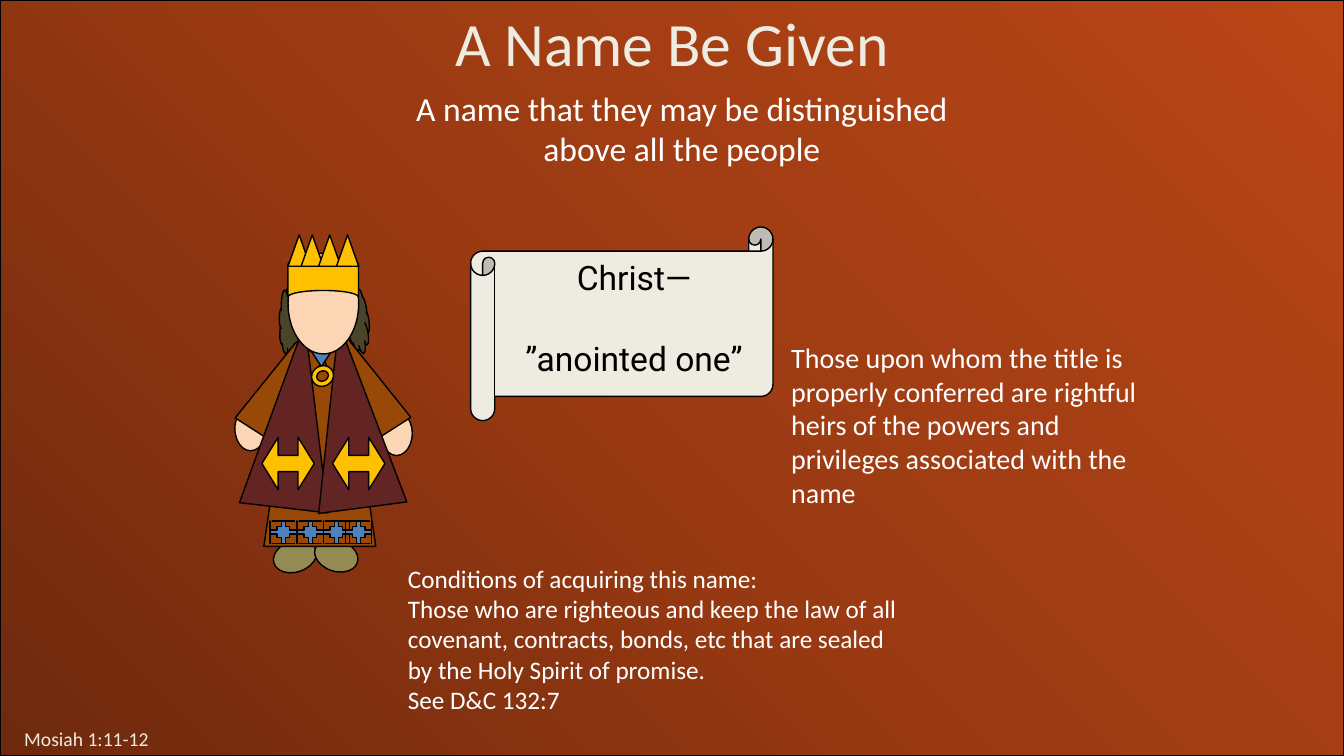
"""Build the slide about the name given to the people in Mosiah."""
from copy import deepcopy

from pptx import Presentation
from pptx.dml.color import RGBColor
from pptx.enum import shapes, text
from pptx.util import Cm, Pt

KIND = shapes.MSO_SHAPE
WIDTH, HEIGHT = 33.87, 19.05
GOLD, SKIN, BROWN, MAROON = "FFC000", "FCD5B5", "984807", "632523"
OLIVE, DARK_OLIVE, BLUE = "948A54", "4A452A", "4F81BD"
IVORY, WHITE, BLACK = "EEECE1", "FFFFFF", "000000"


def colour(value):
    """Turn a hex string into a colour."""
    return RGBColor.from_string(value)


def add_figure(parent, kind, place, fill, turn=0, adjust=()):
    """Add an outlined preset shape, placed in centimetres."""
    shape = parent.shapes.add_shape(kind, *map(Cm, place))
    shape.shadow.inherit = False
    shape.fill.solid()
    shape.fill.fore_color.rgb = colour(fill)
    shape.line.color.rgb = colour(BLACK)
    shape.line.width = Pt(1)
    shape.rotation = turn
    for index, value in enumerate(adjust):
        shape.adjustments[index] = value
    return shape


def add_background(page):
    """Cover the page with a diagonal three-stop gradient."""
    panel = add_figure(page, KIND.RECTANGLE, (0, 0, WIDTH, HEIGHT), BROWN)
    panel.fill.gradient()
    panel.fill.gradient_angle = 45
    first = panel._element.spPr.find(".//{*}gs")
    first.addnext(deepcopy(first))
    stops = ((0, "6E290D"), (0.5, "9C3B13"), (1, "BA4616"))
    for stop, (position, value) in zip(panel.fill.gradient_stops, stops):
        stop.position = position
        stop.color.rgb = colour(value)


def add_text(page, place, lines, size, value, font="Calibri", centred=False, gap=0):
    """Add a wrapping text box with one paragraph per line."""
    box = page.shapes.add_textbox(*map(Cm, place))
    frame = box.text_frame
    frame.word_wrap = True
    frame.auto_size = text.MSO_AUTO_SIZE.SHAPE_TO_FIT_TEXT
    frame.text = "\n".join(lines)
    for index, para in enumerate(frame.paragraphs):
        para.alignment = text.PP_ALIGN.CENTER if centred else text.PP_ALIGN.LEFT
        para.space_before = Pt(gap if index else 0)
        for span in para.runs:
            span.font.name = font
            span.font.size = Pt(size)
            span.font.color.rgb = colour(value)


def add_body(king):
    """Draw feet, robe, hands, hair, sleeves and coat."""
    add_figure(king, KIND.OVAL, (7.04, 13.46, 0.79, 1.12), OLIVE, 71.6)
    add_figure(king, KIND.OVAL, (8.08, 13.44, 0.79, 1.12), OLIVE, 288.4)
    add_figure(king, KIND.TRAPEZOID, (6.65, 8.92, 2.82, 4.85), BROWN)
    for left, top in ((9.6, 10.36), (5.92, 10.24)):
        add_figure(king, KIND.OVAL, (left, top, 0.79, 1.12), SKIN)
    add_figure(king, KIND.CLOUD, (8.74, 7.29, 0.56, 1.63), DARK_OLIVE, 350.5)
    add_figure(king, KIND.CLOUD, (7.04, 7.14, 0.56, 1.88), DARK_OLIVE)
    sleeve = KIND.FLOWCHART_MANUAL_OPERATION
    add_figure(king, sleeve, (6.48, 8.64, 1.32, 2.44), BROWN, 212.7)
    add_figure(king, sleeve, (8.46, 8.56, 1.32, 2.51), BROWN, 147.3)
    for left, turn in ((6.27, 6.6), (7.75, 352.6)):
        add_figure(king, KIND.TRAPEZOID, (left, 8.59, 2.24, 4.22), MAROON, turn, [0.45])
    add_figure(king, KIND.ISOSCELES_TRIANGLE, (7.82, 8.81, 0.56, 0.43), BLUE, 180)


def add_regalia(king):
    """Draw the hem, face, crown, coat arrows and brooch."""
    for left in (6.81, 7.49, 8.15, 8.71):
        add_figure(king, KIND.QUAD_ARROW_CALLOUT, (left, 13.13, 0.66, 0.56), BLUE,
                   adjust=(0.185, 0.5, 0.185, 0.481))
    add_figure(king, KIND.OVAL, (7.26, 6.38, 1.78, 2.54), SKIN)
    add_figure(king, KIND.FLOWCHART_STORED_DATA, (7.65, 6.1, 0.99, 1.78), GOLD, 90)
    for left in (7.26, 7.59, 8.03, 8.48):
        add_figure(king, KIND.ISOSCELES_TRIANGLE, (left, 5.92, 0.56, 0.79), GOLD)
    for left in (6.6, 8.38):
        add_figure(king, KIND.LEFT_RIGHT_ARROW, (left, 11.02, 1.32, 1.32), GOLD, 180,
                   (0.31, 0.31))
    add_figure(king, KIND.DONUT, (7.85, 9.22, 0.56, 0.51), GOLD, 332.7)


def main():
    """Assemble the slide and save it."""
    deck = Presentation()
    deck.slide_width, deck.slide_height = Cm(WIDTH), Cm(HEIGHT)
    page = deck.slides.add_slide(deck.slide_layouts[6])
    add_background(page)
    add_text(page, (4.24, 0, 25.4, 2.13), ["A Name Be Given"], 44, IVORY, centred=True)
    add_text(page, (0.36, 18.19, 6.78, 0.86), ["Mosiah 1:11-12"], 14, IVORY)
    add_text(page, (9.35, 2.08, 15.67, 2.31),
             ["A name that they may be distinguished above all the people"],
             24, WHITE, centred=True)
    add_text(page, (19.69, 8.46, 9.53, 4.52),
             ["Those upon whom the title is properly conferred are rightful heirs "
              "of the powers and privileges associated with the name"], 20, WHITE)
    king = page.shapes.add_group_shape()
    add_body(king)
    add_regalia(king)
    add_figure(page, KIND.HORIZONTAL_SCROLL, (11.86, 5.72, 7.62, 4.88), IVORY)
    add_text(page, (12.27, 6.35, 7.42, 3.33), ["Christ—", "”anointed one”"],
             24, BLACK, "Roboto", centred=True, gap=29)
    add_text(page, (10.03, 14.07, 12.93, 4.11),
             ["Conditions of acquiring this name:",
              "Those who are righteous and keep the law of all covenant, contracts, "
              "bonds, etc that are sealed by the Holy Spirit of promise.",
              "See D&C 132:7"], 18, WHITE)
    deck.save("out.pptx")


if __name__ == "__main__":
    main()
